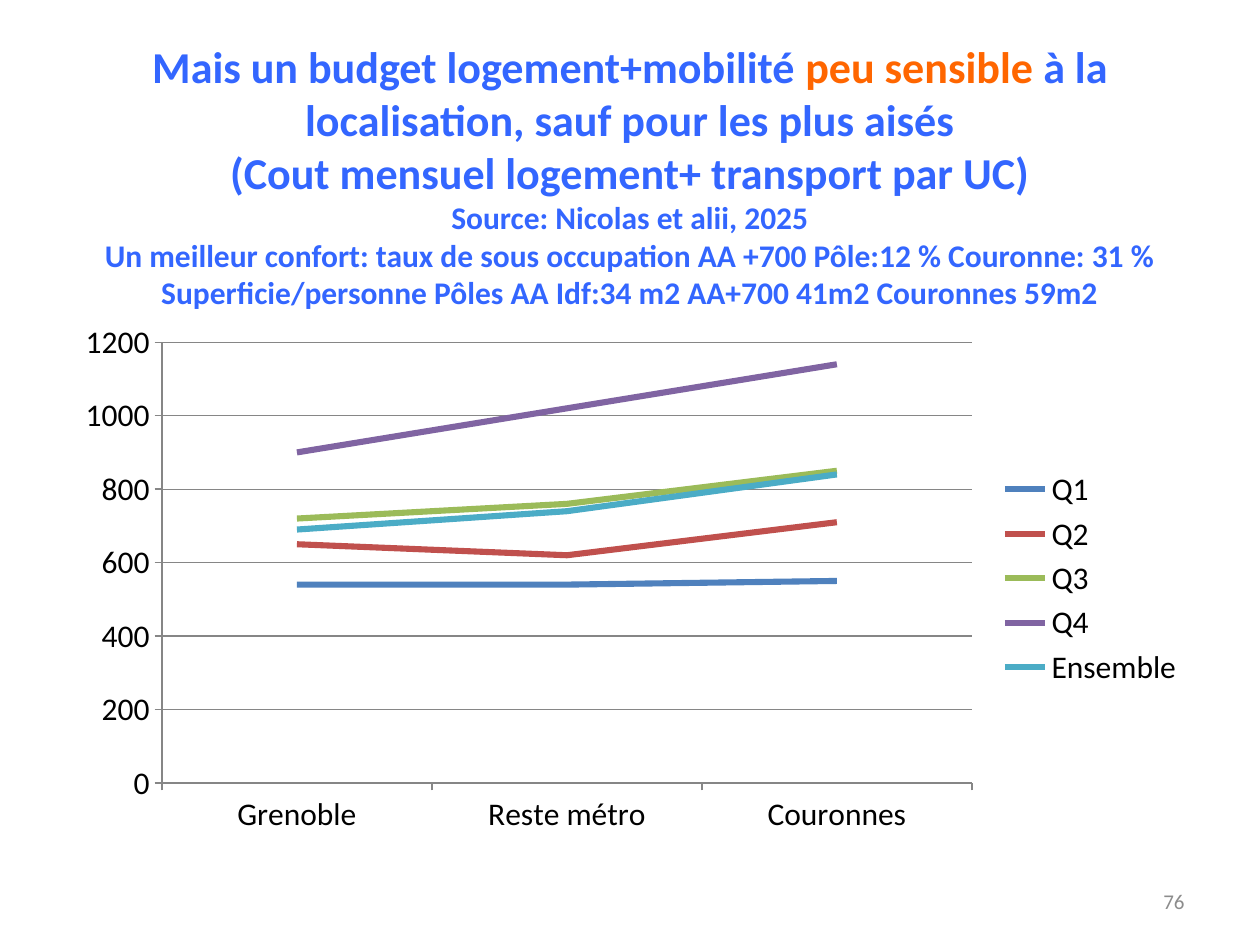
from typing import NamedTuple

from pptx import Presentation
from pptx.chart.data import CategoryChartData as ChartData
from pptx.dml.color import RGBColor
from pptx.enum.chart import XL_CHART_TYPE as Kind
from pptx.enum.chart import XL_LEGEND_POSITION as Side
from pptx.enum.chart import XL_MARKER_STYLE as Marker
from pptx.enum.chart import XL_TICK_MARK as Tick
from pptx.enum.text import MSO_ANCHOR as Anchor
from pptx.enum.text import PP_ALIGN as Align
from pptx.util import Pt

FONT = "Calibri"
BLUE = RGBColor(0x33, 0x66, 0xFF)
ORANGE = RGBColor(0xFF, 0x66, 0x00)
BLACK = RGBColor(0, 0, 0)
GRAY = RGBColor(0x8C, 0x8C, 0x8C)
RULE = RGBColor(0x86, 0x86, 0x86)


class Box(NamedTuple):
    left: float
    top: float
    width: float
    height: float

    def pts(self) -> list:
        return [Pt(v) for v in self]


class Part(NamedTuple):
    text: str
    size: float
    color: RGBColor = BLUE


class Line(NamedTuple):
    name: str
    color: RGBColor
    vals: tuple


TITLE = [
    [Part("Mais un budget logement+mobilité ", 25.2),
     Part("peu sensible", 25.2, ORANGE),
     Part(" à la localisation, sauf pour les plus aisés", 25.2)],
    [Part("(Cout mensuel logement+ transport par UC)", 25.2)],
    [Part("Source: Nicolas et alii, 2025", 18)],
    [Part("Un meilleur confort: taux de sous occupation "
          "AA +700 Pôle:12 % Couronne: 31 %", 18)],
    [Part("Superficie/personne Pôles AA Idf:34 m2 "
          "AA+700 41m2 Couronnes 59m2", 18)],
]

ZONES = ("Grenoble", "Reste métro", "Couronnes")
LINES = [
    Line("Q1", RGBColor(0x4F, 0x81, 0xBD), (540, 540, 550)),
    Line("Q2", RGBColor(0xC0, 0x50, 0x4D), (650, 620, 710)),
    Line("Q3", RGBColor(0x9B, 0xBB, 0x59), (720, 760, 850)),
    Line("Q4", RGBColor(0x80, 0x64, 0xA2), (900, 1020, 1140)),
    Line("Ensemble", RGBColor(0x4B, 0xAC, 0xC6), (690, 740, 840)),
]


def add_text(slide, box: Box, rows: list, align: Align, bold: bool) -> None:
    """Write rows of parts as one paragraph with line breaks."""
    frame = slide.shapes.add_textbox(*box.pts()).text_frame
    frame.word_wrap = True
    frame.vertical_anchor = Anchor.MIDDLE
    para = frame.paragraphs[0]
    para.alignment = align
    para.font.name = FONT
    para.font.bold = bold
    for i, row in enumerate(rows):
        if i:
            para.add_line_break()
        for part in row:
            run = para.add_run()
            run.text = part.text
            run.font.size = Pt(part.size)
            run.font.color.rgb = part.color


def set_rule(line) -> None:
    line.color.rgb = RULE
    line.width = Pt(0.75)


def add_costs(slide, box: Box) -> None:
    data = ChartData(number_format="General")
    data.categories = ZONES
    for line in LINES:
        data.add_series(line.name, line.vals)
    chart = slide.shapes.add_chart(Kind.LINE, *box.pts(), data).chart
    chart.has_title = False
    chart.font.name = FONT
    chart.font.size = Pt(18)
    chart.font.color.rgb = BLACK
    chart.has_legend = True
    chart.legend.position = Side.RIGHT
    chart.legend.include_in_layout = False

    for axis in (chart.category_axis, chart.value_axis):
        axis.major_tick_mark = Tick.OUTSIDE
        axis.minor_tick_mark = Tick.NONE
        set_rule(axis.format.line)
    costs = chart.value_axis
    costs.minimum_scale, costs.maximum_scale = 0, 1200
    costs.major_unit = 200
    costs.has_major_gridlines = True
    set_rule(costs.major_gridlines.format.line)

    plot = chart.plots[0]
    plot.vary_by_categories = False
    for series, line in zip(plot.series, LINES):
        series.smooth = False
        series.marker.style = Marker.NONE
        series.format.line.color.rgb = line.color
        series.format.line.width = Pt(3.5)


def main() -> None:
    deck = Presentation()
    deck.slide_width, deck.slide_height = Pt(720), Pt(540)
    slide = deck.slides.add_slide(deck.slide_layouts[6])
    add_text(slide, Box(36, 21.6, 648, 157), TITLE, Align.CENTER, True)
    add_costs(slide, Box(36, 178.6, 648, 303.8))
    add_text(slide, Box(516, 500.5, 168, 28.8), [[Part("76", 12, GRAY)]],
             Align.RIGHT, False)
    deck.save("out.pptx")


if __name__ == "__main__":
    main()
